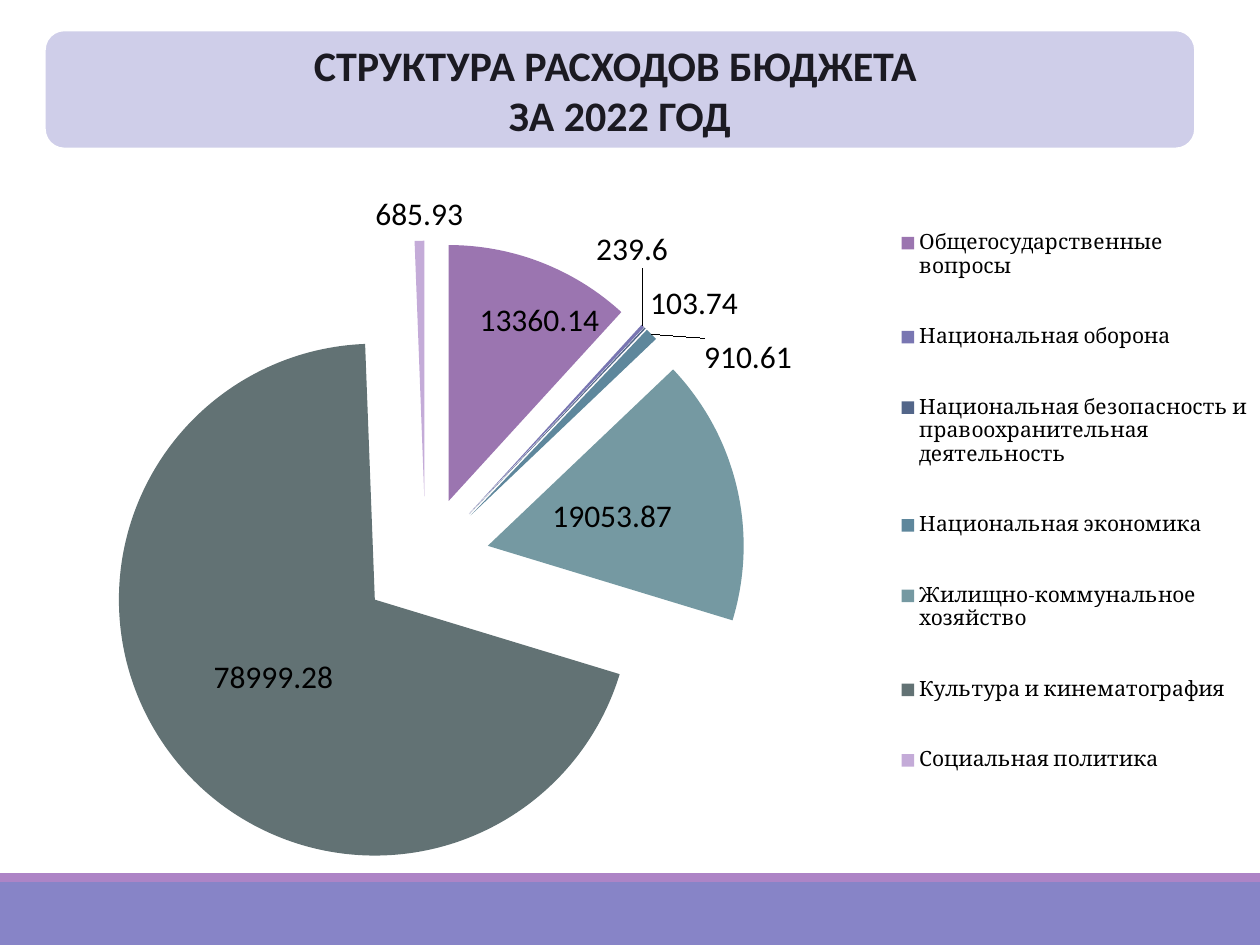
from lxml import etree
from pptx import Presentation
from pptx.chart.data import CategoryChartData
from pptx.dml.color import RGBColor
from pptx.enum.chart import XL_CHART_TYPE, XL_LABEL_POSITION, XL_LEGEND_POSITION
from pptx.enum.shapes import MSO_SHAPE
from pptx.enum.text import MSO_ANCHOR, PP_ALIGN
from pptx.oxml.ns import qn
from pptx.util import Pt

PIE = XL_CHART_TYPE.PIE_EXPLODED
BEST_FIT = XL_LABEL_POSITION.BEST_FIT
LABEL_CENTER = XL_LABEL_POSITION.CENTER
LEGEND_RIGHT = XL_LEGEND_POSITION.RIGHT
RECTANGLE = MSO_SHAPE.RECTANGLE
ROUNDED = MSO_SHAPE.ROUNDED_RECTANGLE
MIDDLE = MSO_ANCHOR.MIDDLE
CENTER = PP_ALIGN.CENTER

COLORS = {
    "footer": "8784C7",
    "stripe": "AD84C6",
    "banner": "CFCEE9",
    "banner_line": "FFFFFF",
    "title": "1B1A22",
    "text": "000000",
}
TITLE = ["СТРУКТУРА РАСХОДОВ БЮДЖЕТА ", "ЗА 2022 ГОД"]
EXPENSES = [
    ("Общегосударственные вопросы", 13360.14, "9B75B0"),
    ("Национальная оборона", 239.6, "7976B2"),
    ("Национальная безопасность и правоохранительная деятельность ", 103.74, "536689"),
    ("Национальная экономика", 910.61, "5E879C"),
    ("Жилищно-коммунальное хозяйство", 19053.87, "7599A2"),
    ("Культура и кинематография", 78999.28, "627274"),
    ("Социальная политика", 685.93, "C4ABD8"),
]
CENTERED_LABELS = (4, 5)
EXPLOSION = 25


def rgb(value):
    return RGBColor.from_string(value)


def style_font(font, name, size, color, bold=False):
    font.name = name
    font.size = Pt(size)
    font.bold = bold
    font.color.rgb = rgb(color)


def add_box(slide, kind, left, top, width, height, fill):
    shape = slide.shapes.add_shape(kind, Pt(left), Pt(top), Pt(width), Pt(height))
    shape.shadow.inherit = False
    shape.fill.solid()
    shape.fill.fore_color.rgb = rgb(fill)
    shape.line.fill.background()
    return shape


def add_title_banner(slide):
    banner = add_box(slide, ROUNDED, 25.5, 17.25, 657.5, 67.75, COLORS["banner"])
    banner.line.color.rgb = rgb(COLORS["banner_line"])
    banner.line.width = Pt(1.25)
    frame = banner.text_frame
    frame.vertical_anchor = MIDDLE
    frame.text = "\n".join(TITLE)
    for paragraph in frame.paragraphs:
        paragraph.alignment = CENTER
        for run in paragraph.runs:
            style_font(run.font, "Calibri", 24, COLORS["title"], bold=True)


def set_layout(element, previous, inner, **fractions):
    """Place a chart part by fractions of the chart's size."""
    for old in element.findall(qn("c:layout")):
        element.remove(old)
    layout = etree.Element(qn("c:layout"))
    manual = etree.SubElement(layout, qn("c:manualLayout"))
    settings = {"layoutTarget": "inner"} if inner else {}
    settings.update(xMode="edge", yMode="edge", **fractions)
    for name, value in settings.items():
        etree.SubElement(manual, qn(f"c:{name}")).set("val", str(value))
    if previous is None:
        element.insert(0, layout)
    else:
        previous.addnext(layout)


def explode(series):
    for old in series._element.findall(qn("c:explosion")):
        series._element.remove(old)
    explosion = etree.Element(qn("c:explosion"))
    explosion.set("val", str(EXPLOSION))
    series._element.find(qn("c:tx")).addnext(explosion)


def add_labels(series):
    labels = series.data_labels
    labels.show_value = True
    labels.position = BEST_FIT
    style_font(labels.font, "Calibri", 18, COLORS["text"])
    for index in CENTERED_LABELS:
        label = series.points[index].data_label
        style_font(label.font, "Calibri", 18, COLORS["text"])
        label.position = LABEL_CENTER


def add_expense_pie(slide):
    data = CategoryChartData()
    data.categories = [name for name, _, _ in EXPENSES]
    data.add_series("Series 1", [value for _, value, _ in EXPENSES])
    chart = slide.shapes.add_chart(
        PIE, Pt(3), Pt(83), Pt(717), Pt(448), data
    ).chart
    chart.has_title = False
    style_font(chart.font, "Calibri", 18, COLORS["text"])

    plot = chart.plots[0]
    plot.vary_by_categories = True
    series = plot.series[0]
    explode(series)
    for index, (_, _, color) in enumerate(EXPENSES):
        fill = series.points[index].format.fill
        fill.solid()
        fill.fore_color.rgb = rgb(color)
    add_labels(series)

    chart.has_legend = True
    legend = chart.legend
    legend.position = LEGEND_RIGHT
    legend.include_in_layout = False
    style_font(legend.font, "Cambria", 12, COLORS["text"])

    plot_area = chart._chartSpace.chart.plotArea
    set_layout(plot_area, None, True, x=0.08, y=0.12, w=0.51, h=0.82)
    legend_position = legend._element.find(qn("c:legendPos"))
    set_layout(legend._element, legend_position, False, x=0.72, y=0.05, w=0.28, h=0.81)


def main():
    presentation = Presentation()
    presentation.slide_width = Pt(720)
    presentation.slide_height = Pt(540)
    slide = presentation.slides.add_slide(presentation.slide_layouts[6])
    add_box(slide, RECTANGLE, 0, 504, 720, 36, COLORS["footer"])
    add_box(slide, RECTANGLE, 0, 499, 720, 5, COLORS["stripe"])
    add_expense_pie(slide)
    add_title_banner(slide)
    presentation.save("out.pptx")


if __name__ == "__main__":
    main()
